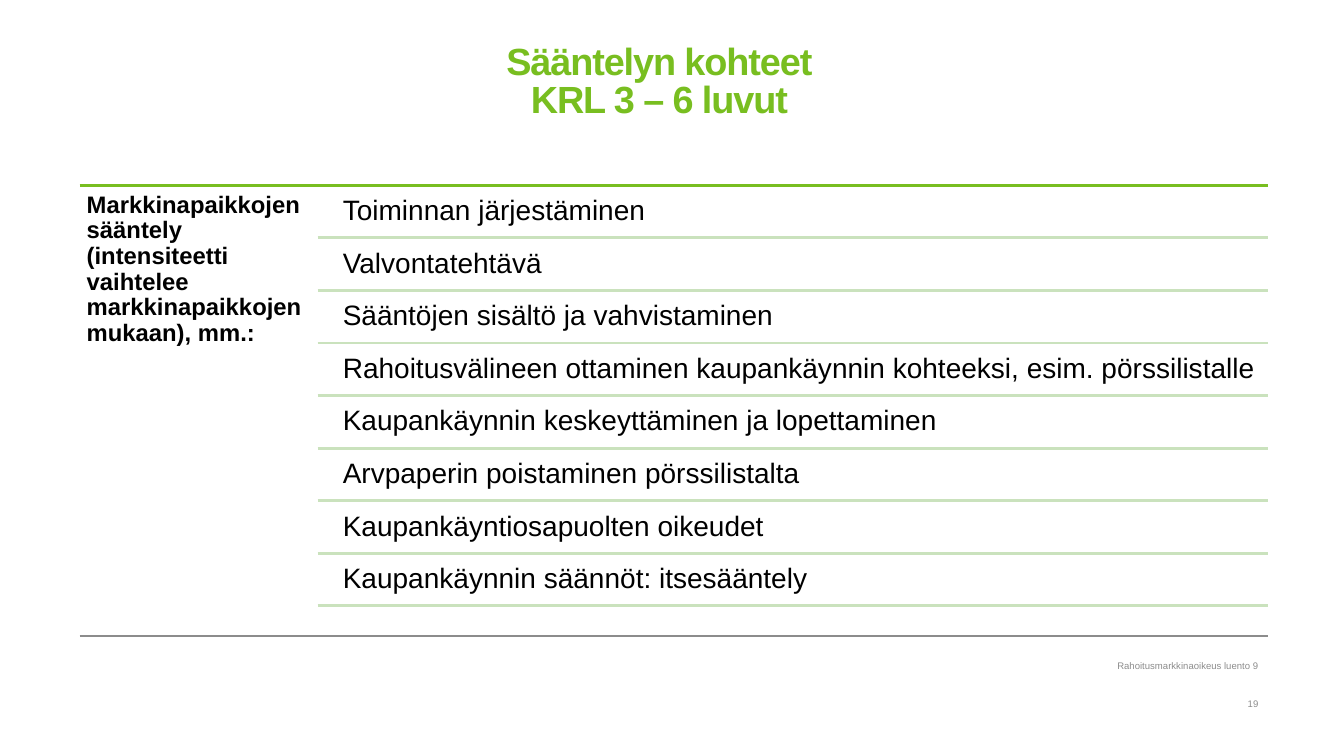
from lxml.etree import SubElement
from pptx import Presentation
from pptx.dml.color import RGBColor
from pptx.enum.shapes import MSO_CONNECTOR
from pptx.enum.text import MSO_ANCHOR, PP_ALIGN
from pptx.oxml.ns import qn
from pptx.util import Inches, Pt

COLORS = {"green": "78BE20", "pale": "CAE2BD", "black": "000000", "gray": "8C8C8C"}
LEFT, RIGHT = 0.79, 12.58
TOPICS_LEFT = 3.15
FIRST_RULE, LAST_RULE = 2.36, 6.01
TOPICS = [
    "Toiminnan järjestäminen",
    "Valvontatehtävä",
    "Sääntöjen sisältö ja vahvistaminen",
    "Rahoitusvälineen ottaminen kaupankäynnin kohteeksi, esim. pörssilistalle",
    "Kaupankäynnin keskeyttäminen ja lopettaminen",
    "Arvpaperin poistaminen pörssilistalta",
    "Kaupankäyntiosapuolten oikeudet",
    "Kaupankäynnin säännöt: itsesääntely",
]


def add_rule(page, left, top, color, width):
    """Draw a horizontal line from left to the right margin."""
    line = page.shapes.add_connector(
        MSO_CONNECTOR.STRAIGHT, Inches(left), Inches(top), Inches(RIGHT), Inches(top)
    )
    line.line.color.rgb = RGBColor.from_string(COLORS[color])
    line.line.width = Pt(width)
    SubElement(line._element.spPr, qn("a:effectLst"))


def add_text(page, text, place, size, color="black", bold=False, insets=(0, 0, 0, 0),
             align=PP_ALIGN.LEFT, anchor=MSO_ANCHOR.TOP, line_spacing=1.0, tracking=0):
    """Add a wrapped text box holding one formatted paragraph."""
    box = page.shapes.add_textbox(*[Inches(length) for length in place])
    frame = box.text_frame
    frame.word_wrap = True
    frame.vertical_anchor = anchor
    frame.margin_left, frame.margin_top, frame.margin_right, frame.margin_bottom = [
        Inches(inset) for inset in insets
    ]
    para = frame.paragraphs[0]
    para.text = text
    para.alignment = align
    para.line_spacing = line_spacing
    for span in para.runs:
        span.font.name = "Arial"
        span.font.size = Pt(size)
        span.font.bold = bold
        span.font.color.rgb = RGBColor.from_string(COLORS[color])
        if tracking:
            span._r.get_or_add_rPr().set("spc", str(round(tracking * 100)))


def add_topics(page):
    """List the topics, each with a pale rule below it."""
    pitch = (LAST_RULE - FIRST_RULE) / (len(TOPICS) - 1)
    for index, topic in enumerate(TOPICS):
        rule_top = FIRST_RULE + index * pitch
        add_text(page, topic, (3.32, rule_top - 0.49, 9.26, 0.5), 20,
                 insets=(0.08,) * 4, line_spacing=0.9)
        add_rule(page, TOPICS_LEFT, rule_top, "pale", 2)


def add_footer(page, text, top):
    """Add a small right-aligned footer line."""
    add_text(page, text, (7.2, top, 5.28, 0.18), 6.8, "gray",
             insets=(0.1, 0.05, 0, 0.05), align=PP_ALIGN.RIGHT, anchor=MSO_ANCHOR.MIDDLE)


def main():
    """Build the slide and save the deck."""
    deck = Presentation()
    deck.slide_width, deck.slide_height = Inches(13.33), Inches(7.5)
    page = deck.slides.add_slide(deck.slide_layouts[6])
    add_rule(page, LEFT, 6.31, "gray", 1)
    add_text(page, "Sääntelyn kohteet \nKRL 3 – 6 luvut ", (0.69, 0.44, 11.79, 1.31), 27,
             "green", bold=True, align=PP_ALIGN.CENTER, line_spacing=0.85, tracking=-0.8)
    add_rule(page, LEFT, 1.84, "green", 2)
    add_text(page, "Markkinapaikkojen sääntely (intensiteetti vaihtelee "
             "markkinapaikkojen mukaan), mm.:", (LEFT, 1.84, 2.36, 4.19), 17,
             bold=True, insets=(0.07,) * 4, line_spacing=0.9)
    add_topics(page)
    add_footer(page, "Rahoitusmarkkinaoikeus luento 9", 6.51)
    add_footer(page, "19", 6.89)
    deck.save("out.pptx")


if __name__ == "__main__":
    main()
